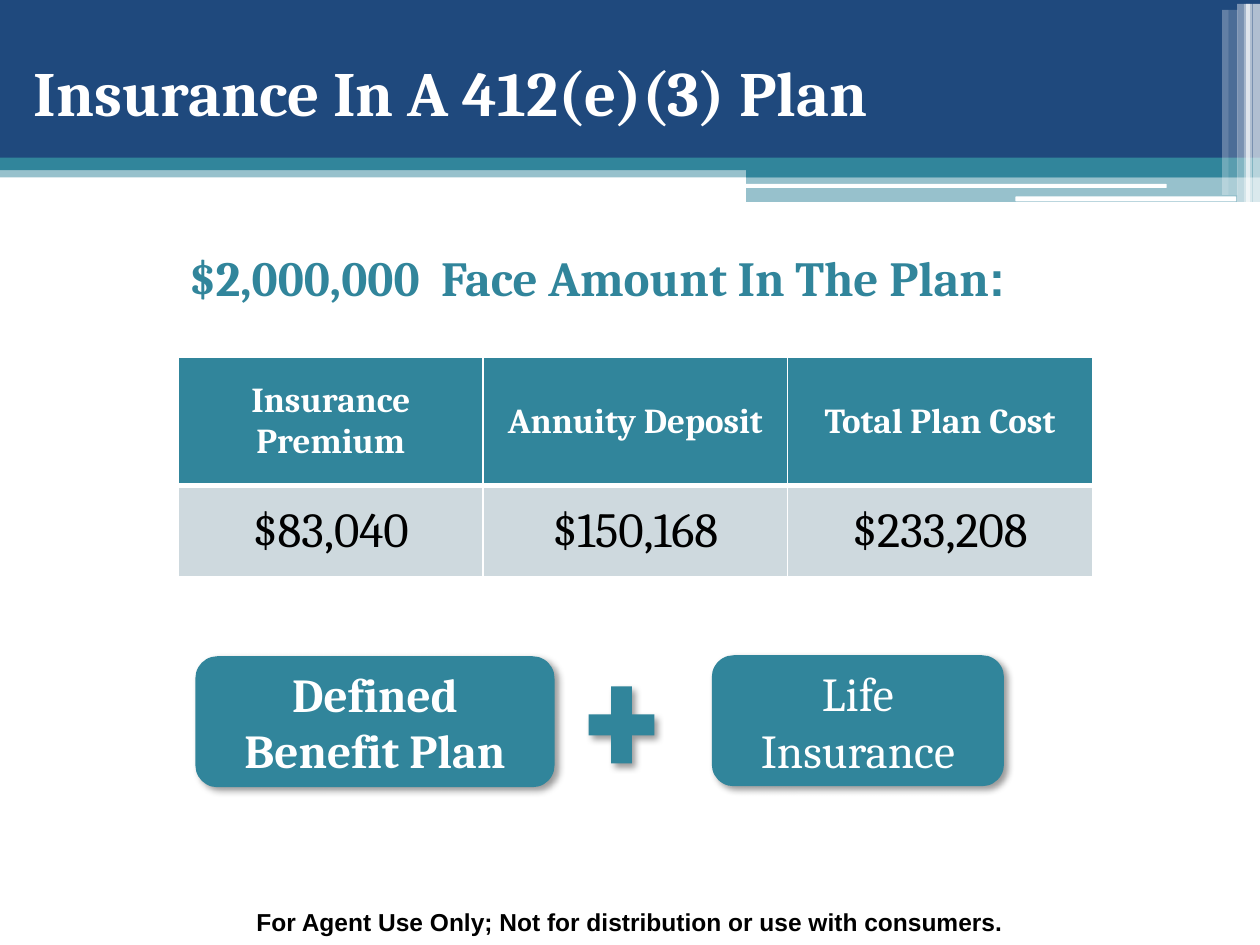
"""Build the insurance plan slide with its banner, cost table and plan boxes."""
from dataclasses import dataclass

from lxml import etree
from pptx import Presentation
from pptx.dml.color import RGBColor
from pptx.enum.shapes import MSO_SHAPE
from pptx.enum.text import MSO_ANCHOR, PP_ALIGN
from pptx.oxml.ns import qn
from pptx.util import Cm, Pt

RECTANGLE = MSO_SHAPE.RECTANGLE
ROUNDED = MSO_SHAPE.ROUNDED_RECTANGLE
PLUS = MSO_SHAPE.MATH_PLUS
CENTER, LEFT = PP_ALIGN.CENTER, PP_ALIGN.LEFT
TOP, MIDDLE, BOTTOM = MSO_ANCHOR.TOP, MSO_ANCHOR.MIDDLE, MSO_ANCHOR.BOTTOM


@dataclass(frozen=True)
class Theme:
    navy: str = "1F497D"
    teal: str = "31859B"
    pale: str = "CED9DE"
    white: str = "FFFFFF"
    black: str = "000000"
    serif: str = "Cambria"
    sans: str = "Arial"
    title: int = 36
    large: int = 28
    box: int = 27
    header: int = 20
    footer: int = 14


THEME = Theme()


@dataclass(frozen=True)
class Box:
    left: float
    top: float
    width: float
    height: float

    def lengths(self) -> tuple:
        return tuple(Cm(value) for value in (self.left, self.top, self.width, self.height))


@dataclass(frozen=True)
class Band:
    box: Box
    color: str
    opacity: int = 100
    kind: int = RECTANGLE


@dataclass(frozen=True)
class TextStyle:
    size: int
    color: str
    bold: bool = True
    name: str = THEME.serif
    alignment: int = CENTER


BANDS = [
    Band(Box(0, 3.35, 25.4, 0.23), THEME.teal, 50),
    Band(Box(0, 0, 25.4, 3.2), THEME.navy),
    Band(Box(0, 3.18, 25.4, 0.25), THEME.teal),
    Band(Box(15.04, 3.33, 10.36, 0.25), THEME.teal),
    Band(Box(15.04, 3.56, 10.36, 0.51), THEME.teal, 50),
    Band(Box(15.01, 3.71, 8.51, 0.08), THEME.white, kind=ROUNDED),
    Band(Box(20.47, 3.96, 4.45, 0.1), THEME.white, kind=ROUNDED),
    Band(Box(25.25, 0.08, 0.18, 3.99), THEME.white, 65),
    Band(Box(25.12, 0.08, 0.13, 3.99), THEME.white, 65),
    Band(Box(25.07, 0.08, 0.13, 3.99), THEME.white, 60),
    Band(Box(24.94, 0.08, 0.13, 3.99), THEME.white, 40),
    Band(Box(24.77, 0.2, 0.18, 3.73), THEME.white, 20),
    Band(Box(24.64, 0.2, 0.13, 3.73), THEME.white, 30),
]
COSTS = [
    ("Insurance Premium", "Annuity Deposit", "Total Plan Cost"),
    ("$83,040", "$150,168", "$233,208"),
]
PLAN_BOXES = [
    (Box(3.94, 13.23, 7.24, 2.64), "Defined Benefit Plan", True),
    (Box(14.35, 13.21, 5.89, 2.64), "Life Insurance", False),
]


def apply(target, values: dict) -> None:
    for name, value in values.items():
        setattr(target, name, value)


def write(frame, text: str, style: TextStyle, anchor: int = MIDDLE,
          side: float = 0.2, edge: float = 0.1) -> None:
    apply(frame, {
        "word_wrap": True, "vertical_anchor": anchor,
        "margin_left": Cm(side), "margin_right": Cm(side),
        "margin_top": Cm(edge), "margin_bottom": Cm(edge),
    })
    frame.paragraphs[0].alignment = style.alignment
    add_run(frame.paragraphs[0], text, style)


def add_run(paragraph, text: str, style: TextStyle) -> None:
    run = paragraph.add_run()
    run.text = text
    apply(run.font, {"size": Pt(style.size), "bold": style.bold, "name": style.name})
    run.font.color.rgb = RGBColor.from_string(style.color)


def draw_band(slide, band: Band):
    shape = slide.shapes.add_shape(band.kind, *band.box.lengths())
    shape.shadow.inherit = False
    shape.fill.solid()
    shape.fill.fore_color.rgb = RGBColor.from_string(band.color)
    shape.line.fill.background()
    if band.opacity < 100:
        color = shape.element.spPr.find(".//" + qn("a:srgbClr"))
        etree.SubElement(color, qn("a:alpha"), val=str(band.opacity * 1000))
    return shape


def draw_raised(slide, box: Box, kind: int):
    shape = draw_band(slide, Band(box, THEME.teal, kind=kind))
    effects = shape.element.spPr.find(qn("a:effectLst"))
    shadow = etree.SubElement(effects, qn("a:outerShdw"), blurRad=str(Pt(4)),
                              dist=str(Pt(3)), dir="2700000", algn="tl", rotWithShape="0")
    color = etree.SubElement(shadow, qn("a:srgbClr"), val=THEME.black)
    etree.SubElement(color, qn("a:alpha"), val="40000")
    return shape


def draw_text(slide, box: Box, text: str, style: TextStyle):
    shape = slide.shapes.add_textbox(*box.lengths())
    write(shape.text_frame, text, style, TOP)
    return shape


def draw_title(slide, text: str) -> None:
    title = slide.shapes.title
    title.element.getparent().append(title.element)
    apply(title, dict(zip(("left", "top", "width", "height"),
                          Box(0.43, -0.84, 25.4, 3.45).lengths())))
    style = TextStyle(THEME.title, THEME.white, alignment=LEFT)
    write(title.text_frame, text, style, BOTTOM, side=0.25, edge=0)


def set_borders(cell, widths: dict) -> None:
    properties = cell._tc.get_or_add_tcPr()
    for tag, width in widths.items():
        line = etree.SubElement(properties, qn(tag), w=str(Pt(width)))
        fill = etree.SubElement(line, qn("a:solidFill"))
        etree.SubElement(fill, qn("a:srgbClr"), val=THEME.white)


def draw_table(slide, box: Box, heights: tuple) -> None:
    table = slide.shapes.add_table(len(COSTS), len(COSTS[0]), *box.lengths()).table
    styles = (TextStyle(THEME.header, THEME.white), TextStyle(THEME.large, THEME.black, False))
    fills = (THEME.teal, THEME.pale)
    for row_index, row in enumerate(COSTS):
        table.rows[row_index].height = Cm(heights[row_index])
        top, bottom = ((1, 3), (3, 1))[row_index]
        for column_index, text in enumerate(row):
            cell = table.cell(row_index, column_index)
            set_borders(cell, {"a:lnL": 1, "a:lnR": 1, "a:lnT": top, "a:lnB": bottom})
            cell.fill.solid()
            cell.fill.fore_color.rgb = RGBColor.from_string(fills[row_index])
            write(cell.text_frame, text, styles[row_index])
            apply(cell, {"vertical_anchor": MIDDLE, "margin_left": Cm(0.18),
                         "margin_right": Cm(0.18), "margin_top": Cm(0.1),
                         "margin_bottom": Cm(0.1)})


def main() -> None:
    presentation = Presentation()
    apply(presentation, {"slide_width": Cm(25.4), "slide_height": Cm(19.05)})
    slide = presentation.slides.add_slide(presentation.slide_layouts[5])
    for band in BANDS:
        draw_band(slide, band)
    draw_text(slide, Box(0, 18.19, 25.4, 0.86),
              "For Agent Use Only; Not for distribution or use with consumers.",
              TextStyle(THEME.footer, THEME.black, name=THEME.sans))
    draw_title(slide, "Insurance In A 412(e)(3) Plan")
    heading = draw_text(slide, Box(3.61, 4.88, 20.65, 1.4),
                        "$2,000,000  Face Amount In The Plan",
                        TextStyle(THEME.large, THEME.teal, alignment=LEFT))
    add_run(heading.text_frame.paragraphs[0], ":",
            TextStyle(THEME.large, THEME.teal, name=THEME.sans))
    draw_table(slide, Box(3.6, 7.21, 18.42, 4.42), (2.58, 1.84))
    for box, text, bold in PLAN_BOXES:
        shape = draw_raised(slide, box, ROUNDED)
        write(shape.text_frame, text, TextStyle(THEME.box, THEME.white, bold))
    draw_raised(slide, Box(11.63, 13.56, 1.8, 2.11), PLUS)
    presentation.save("out.pptx")


if __name__ == "__main__":
    main()
